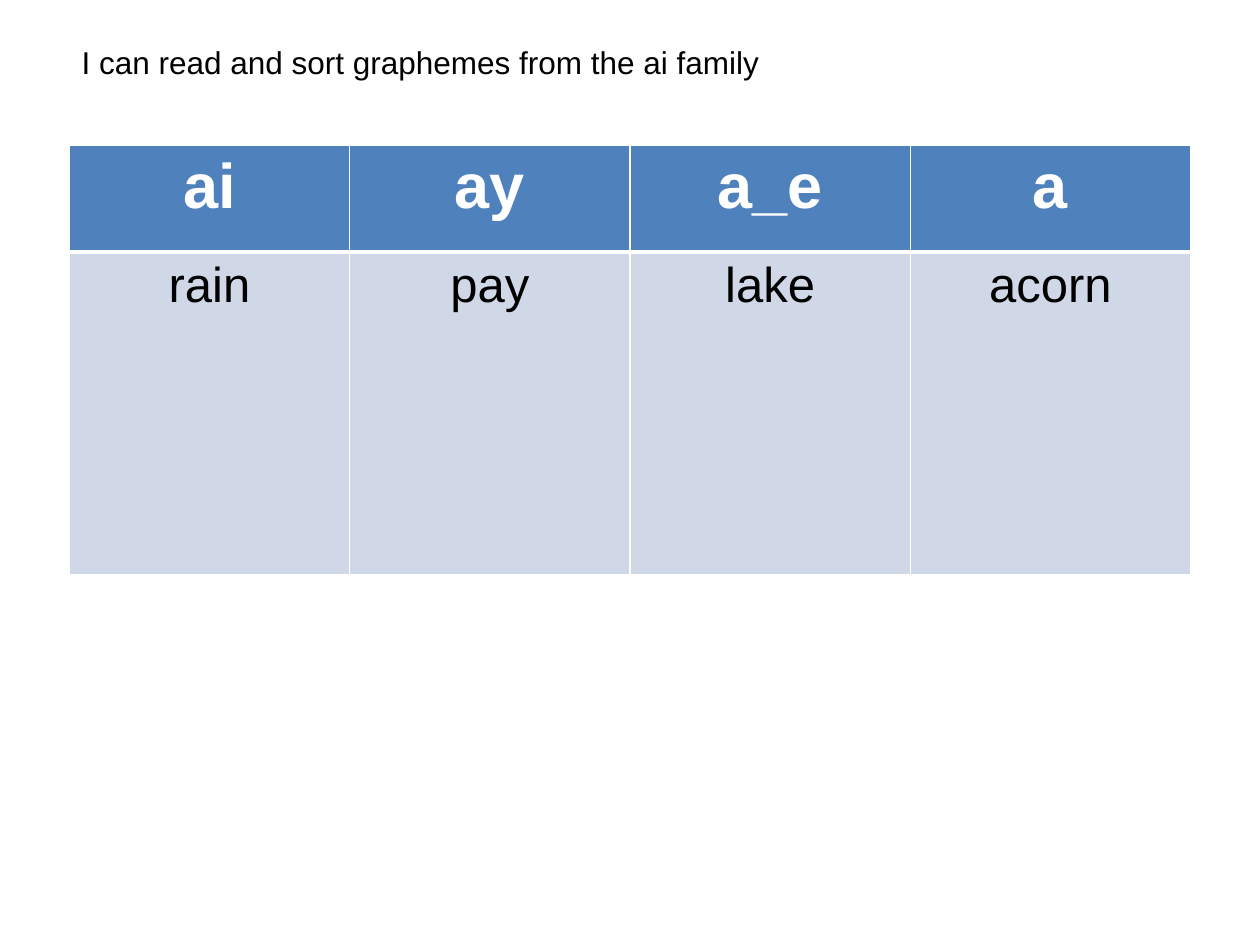
from dataclasses import dataclass

from lxml.etree import SubElement as Sub
from pptx import Presentation
from pptx.dml.color import RGBColor as RGB
from pptx.enum.text import MSO_AUTO_SIZE as Auto, PP_ALIGN as Align
from pptx.oxml.ns import qn
from pptx.util import Pt


@dataclass(frozen=True)
class Theme:
    font: str = "Arial"
    white: str = "FFFFFF"
    black: str = "000000"
    blue: str = "4F81BD"
    pale: str = "D0D8E8"
    goal: int = 18
    head: int = 36
    word: int = 28
    thin: int = 1
    thick: int = 3


THEME = Theme()
LEFT, WIDTH = 39.6, 640.8
ROWS = (61.2, 184.3)
FAMILY = {"ai": "rain", "ay": "pay", "a_e": "lake", "a": "acorn"}


def add_run(para, text, size, color, bold=False):
    run = para.add_run()
    run.text = text
    font = run.font
    font.name, font.size, font.bold = THEME.font, Pt(size), bold
    font.color.rgb = RGB.from_string(color)


def add_goal(slide, text):
    box = slide.shapes.add_textbox(Pt(LEFT), Pt(20.9), Pt(WIDTH), Pt(51.1))
    frame = box.text_frame
    frame.word_wrap = True
    frame.auto_size = Auto.SHAPE_TO_FIT_TEXT
    add_run(frame.paragraphs[0], text, THEME.goal, THEME.black)


def add_edge(cell, side, width):
    props = cell._tc.get_or_add_tcPr()
    line = Sub(props, qn(f"a:ln{side}"), w=str(Pt(width)))
    fill = Sub(line, qn("a:solidFill"))
    Sub(fill, qn("a:srgbClr"), val=THEME.white)


def fill_cell(cell, text, top):
    joint = "B" if top else "T"
    for side in "LRTB":
        add_edge(cell, side, THEME.thick if side == joint else THEME.thin)
    cell.fill.solid()
    cell.fill.fore_color.rgb = RGB.from_string(THEME.blue if top else THEME.pale)
    para = cell.text_frame.paragraphs[0]
    para.alignment = Align.CENTER
    if top:
        add_run(para, text, THEME.head, THEME.white, True)
    else:
        add_run(para, text, THEME.word, THEME.black)


def add_sort(slide, family):
    frame = slide.shapes.add_table(
        len(ROWS), len(family), Pt(LEFT), Pt(82.8), Pt(WIDTH), Pt(sum(ROWS))
    )
    table = frame.table
    for row, height in zip(table.rows, ROWS):
        row.height = Pt(height)
    for col, pair in enumerate(family.items()):
        table.columns[col].width = Pt(WIDTH / len(family))
        for row, text in enumerate(pair):
            fill_cell(table.cell(row, col), text, row == 0)


def main():
    deck = Presentation()
    deck.slide_width, deck.slide_height = Pt(720), Pt(540)
    slide = deck.slides.add_slide(deck.slide_layouts[6])
    add_sort(slide, FAMILY)
    add_goal(slide, "I can read and sort graphemes from the ai family")
    deck.save("out.pptx")


if __name__ == "__main__":
    main()
